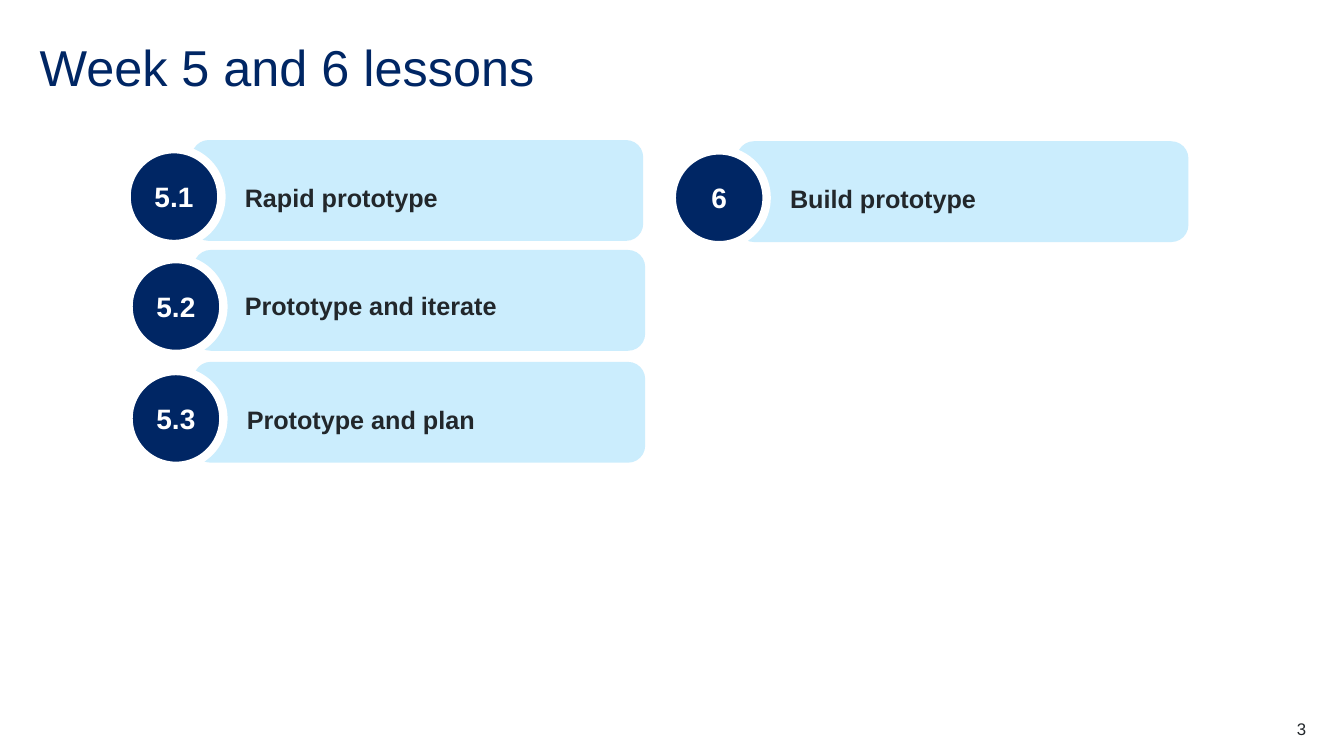
import dataclasses

import pptx
import pptx.dml.color
import pptx.enum.shapes
import pptx.enum.text
import pptx.util

Cm = pptx.util.Cm
Pt = pptx.util.Pt
Rgb = pptx.dml.color.RGBColor
Kind = pptx.enum.shapes.MSO_SHAPE
Align = pptx.enum.text.PP_ALIGN
Anchor = pptx.enum.text.MSO_ANCHOR
Fit = pptx.enum.text.MSO_AUTO_SIZE


@dataclasses.dataclass(frozen=True)
class Theme:
    font: str = "Arial"
    navy: Rgb = Rgb(0x00, 0x26, 0x64)
    sky: Rgb = Rgb(0xCB, 0xED, 0xFD)
    ink: Rgb = Rgb(0x22, 0x27, 0x2B)
    white: Rgb = Rgb(0xFF, 0xFF, 0xFF)
    title: int = 36
    badge: int = 20
    label: int = 18
    page: int = 12
    ring: int = 6


@dataclasses.dataclass(frozen=True)
class Lesson:
    """Card corner in cm, with the label's shift from that corner."""
    code: str
    name: str
    left: float
    top: float
    shift: float = 1.34
    drop: float = 0.69


THEME = Theme()
LESSONS = [
    Lesson("5.1", "Rapid prototype", 4.83, 3.53),
    Lesson("5.2", "Prototype and iterate", 4.88, 6.3, 1.29, 0.64),
    Lesson("5.3", "Prototype and plan", 4.88, 9.12),
    Lesson("6", "Build prototype", 18.57, 3.56),
]


def write(shape, text: str, *, size: int, color: Rgb, bold: bool = False,
          align=Align.LEFT, anchor=Anchor.MIDDLE, space: float = 1.0,
          inset: float | None = 0) -> None:
    """Fill a shape with one formatted line; inset None keeps the default."""
    frame = shape.text_frame
    frame.word_wrap = True
    frame.vertical_anchor = anchor
    if inset is not None:
        frame.margin_left = frame.margin_right = Cm(inset)
        frame.margin_top = frame.margin_bottom = Cm(inset)
    line = frame.paragraphs[0]
    line.alignment = align
    line.line_spacing = space
    run = line.add_run()
    run.text = text
    run.font.name = THEME.font
    run.font.size = Pt(size)
    run.font.bold = bold
    run.font.color.rgb = color


def add_box(slide, left: float, top: float, width: float, height: float):
    return slide.shapes.add_textbox(Cm(left), Cm(top), Cm(width), Cm(height))


def add_form(slide, kind, left: float, top: float, width: float,
             height: float, fill: Rgb):
    """Add a flat, filled shape without an outline."""
    form = slide.shapes.add_shape(kind, Cm(left), Cm(top), Cm(width), Cm(height))
    form.shadow.inherit = False
    form.fill.solid()
    form.fill.fore_color.rgb = fill
    form.line.fill.background()
    return form


def add_lesson(slide, item: Lesson) -> None:
    card = add_form(slide, Kind.ROUNDED_RECTANGLE, item.left, item.top,
                    11.38, 2.54, THEME.sky)
    card.adjustments[0] = 0.17

    badge = add_form(slide, Kind.OVAL, item.left - 1.64, item.top + 0.23,
                     2.39, 2.39, THEME.navy)
    badge.line.color.rgb = THEME.white
    badge.line.width = Pt(THEME.ring)
    write(badge, item.code, size=THEME.badge, color=THEME.white, bold=True,
          align=Align.CENTER, inset=None)

    label = add_form(slide, Kind.RECTANGLE, item.left + item.shift,
                     item.top + item.drop, 9.22, 1.02, THEME.sky)
    write(label, item.name, size=THEME.label, color=THEME.ink, bold=True,
          anchor=Anchor.TOP, space=1.5)
    label.text_frame.auto_size = Fit.SHAPE_TO_FIT_TEXT


def main() -> None:
    deck = pptx.Presentation()
    deck.slide_width, deck.slide_height = Cm(33.87), Cm(19.05)
    slide = deck.slides.add_slide(deck.slide_layouts[6])

    page = add_box(slide, 30.91, 18.11, 2.01, 0.51)
    write(page, "3", size=THEME.page, color=THEME.ink, align=Align.RIGHT)
    title = add_box(slide, 1, 1, 31.9, 1.52)
    write(title, "Week 5 and 6 lessons", size=THEME.title, color=THEME.navy,
          space=0.9)
    for item in LESSONS:
        add_lesson(slide, item)

    deck.save("out.pptx")


if __name__ == "__main__":
    main()
